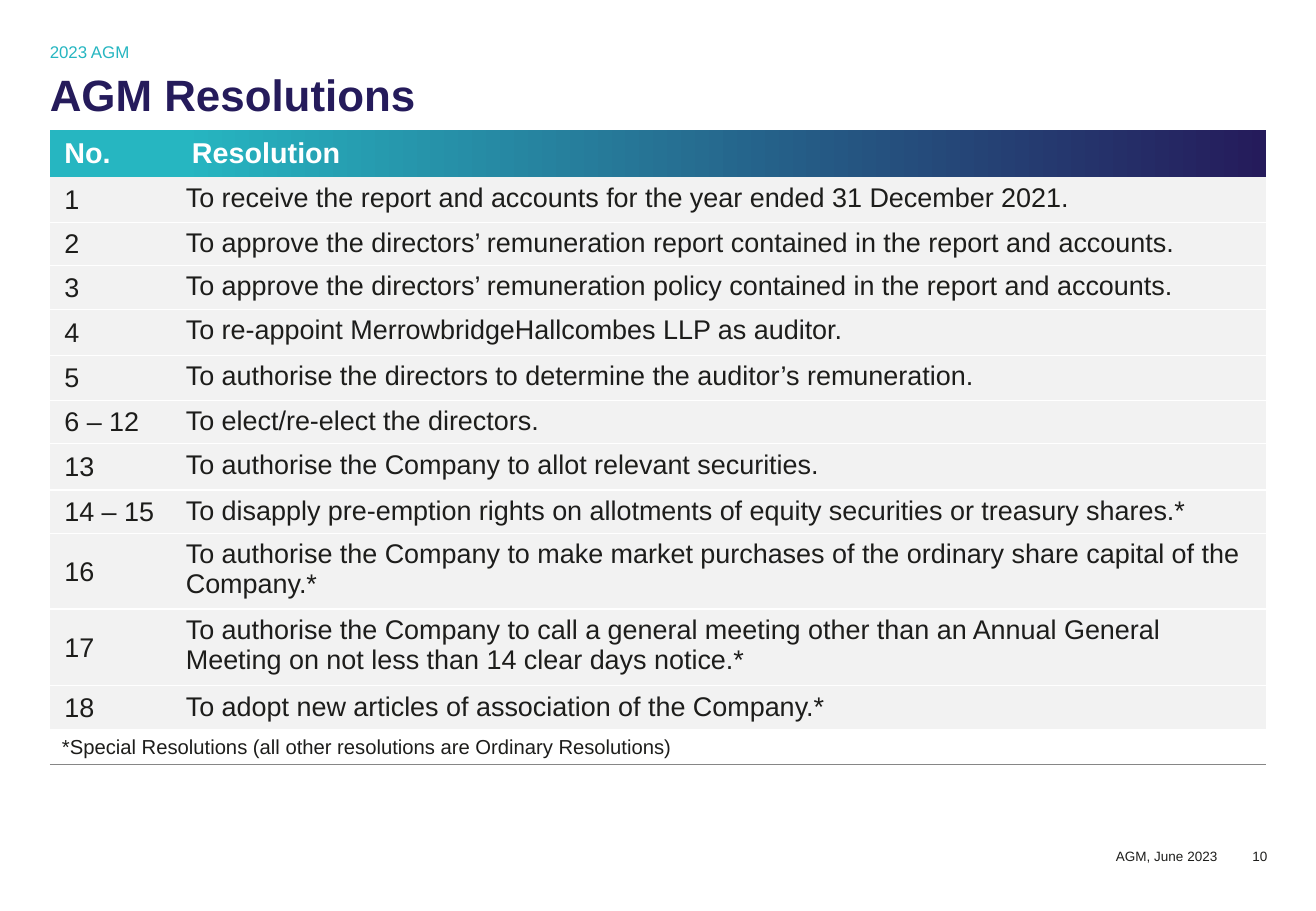
from lxml import etree
from pptx import Presentation
from pptx.dml.color import RGBColor
from pptx.enum.text import MSO_ANCHOR, PP_ALIGN
from pptx.oxml.ns import qn
from pptx.util import Inches, Pt

TOP, MIDDLE = MSO_ANCHOR.TOP, MSO_ANCHOR.MIDDLE
LEFT, RIGHT = PP_ALIGN.LEFT, PP_ALIGN.RIGHT

TEAL = RGBColor(0x26, 0xB6, 0xC1)
NAVY = RGBColor(0x25, 0x1B, 0x5B)
INK = RGBColor(0x1D, 0x1D, 0x1B)
WHITE = RGBColor(0xFF, 0xFF, 0xFF)
ROW_GREY = RGBColor(0xF2, 0xF2, 0xF2)
RULE_GREY = RGBColor(0x86, 0x86, 0x86)
FONT = "Arial"

HEADER = ("No.", "Resolution")
HEADER_HEIGHT = 0.39
# number, resolution, row height
RESOLUTIONS = [
    ("1", "To receive the report and accounts for the year ended 31 December 2021.", 0.37),
    ("2", "To approve the directors’ remuneration report contained in the report and accounts.", 0.35),
    ("3", "To approve the directors’ remuneration policy contained in the report and accounts.", 0.36),
    ("4", "To re-appoint MerrowbridgeHallcombes LLP as auditor.", 0.38),
    ("5", "To authorise the directors to determine the auditor’s remuneration.", 0.37),
    ("6 – 12", "To elect/re-elect the directors.", 0.35),
    ("13", "To authorise the Company to allot relevant securities.", 0.38),
    ("14 – 15", "To disapply pre-emption rights on allotments of equity securities "
                "or treasury shares.*", 0.36),
    ("16", "To authorise the Company to make market purchases of the ordinary share capital "
           "of the Company.*", 0.62),
    ("17", "To authorise the Company to call a general meeting other than an Annual General "
           "Meeting on not less than 14 clear days notice.*", 0.63),
    ("18", "To adopt new articles of association of the Company.*", 0.36),
]
FOOTNOTE = "*Special Resolutions (all other resolutions are Ordinary Resolutions)"
FOOTNOTE_HEIGHT = 0.29
COLUMN_WIDTHS = (1.07, 8.94)
TABLE_LEFT, TABLE_TOP = 0.41, 1.07

# text, box, size, colour, bold, alignment, anchor, line spacing
TEXTS = [
    ("2023 AGM", (0.41, 0.36, 10.02, 0.19), 10, TEAL, False, LEFT, TOP, 0.9),
    ("AGM Resolutions", (0.41, 0.61, 10.01, 0.46), 26, NAVY, True, LEFT, TOP, 0.9),
    ("AGM, June 2023", (4.43, 6.85, 5.59, 0.4), 8, INK, False, RIGHT, MIDDLE, 1.0),
    ("10", (10.02, 6.85, 0.41, 0.4), 8, INK, False, RIGHT, MIDDLE, 1.0),
]


def style_font(paragraph, size, color, bold=False):
    font = paragraph.font
    font.name, font.size, font.bold = FONT, Pt(size), bold
    font.color.rgb = color


def add_text(slide, text, box, size, color, bold, alignment, anchor, spacing):
    frame = slide.shapes.add_textbox(*map(Inches, box)).text_frame
    frame.word_wrap = True
    frame.vertical_anchor = anchor
    frame.margin_left = frame.margin_right = frame.margin_top = frame.margin_bottom = 0
    paragraph = frame.paragraphs[0]
    paragraph.text = text
    paragraph.alignment = alignment
    paragraph.line_spacing = spacing
    style_font(paragraph, size, color, bold)


def fill_cell(cell, text, size, color, margins, bold=False, anchor=MIDDLE):
    """Write the text; margins are left, top, right, bottom in inches."""
    cell.text = text
    cell.vertical_anchor = anchor
    (cell.margin_left, cell.margin_top,
     cell.margin_right, cell.margin_bottom) = map(Inches, margins)
    style_font(cell.text_frame.paragraphs[0], size, color, bold)


def set_borders(cell, top=None, bottom=None):
    """Draw the top and bottom edges given as (colour, points); hide the others."""
    properties = cell._tc.get_or_add_tcPr()
    edges = (("a:lnL", None), ("a:lnR", None), ("a:lnT", top), ("a:lnB", bottom))
    for index, (tag, edge) in enumerate(edges):
        line = etree.Element(qn(tag))
        if edge:
            color, width = edge
            line.set("w", str(Pt(width)))
            solid = etree.SubElement(line, qn("a:solidFill"))
            etree.SubElement(solid, qn("a:srgbClr")).set("val", str(color))
        else:
            etree.SubElement(line, qn("a:noFill"))
        properties.insert(index, line)


def set_solid(cell, color):
    cell.fill.solid()
    cell.fill.fore_color.rgb = color


def set_gradient(cell, *colors):
    cell.fill.gradient()
    cell.fill.gradient_angle = 0
    for stop, color in zip(cell.fill.gradient_stops, colors):
        stop.color.rgb = color


def add_resolution_table(slide):
    heights = [HEADER_HEIGHT, *(row[2] for row in RESOLUTIONS), FOOTNOTE_HEIGHT]
    table = slide.shapes.add_table(
        len(heights), len(COLUMN_WIDTHS), Inches(TABLE_LEFT), Inches(TABLE_TOP),
        Inches(sum(COLUMN_WIDTHS)), Inches(sum(heights))).table
    table.first_row = table.horz_banding = False
    for column, width in zip(table.columns, COLUMN_WIDTHS):
        column.width = Inches(width)
    for row, height in zip(table.rows, heights):
        row.height = Inches(height)

    for column, text in enumerate(HEADER):
        cell = table.cell(0, column)
        left = 0.12 if column == 0 else 0.1
        fill_cell(cell, text, 17, WHITE, (left, 0.05, 0.1, 0.05), bold=True)
        set_borders(cell)
    set_solid(table.cell(0, 0), TEAL)
    set_gradient(table.cell(0, 1), TEAL, NAVY)

    separator = (WHITE, 1)
    for index, (number, resolution, _) in enumerate(RESOLUTIONS, 1):
        number_cell, resolution_cell = table.cell(index, 0), table.cell(index, 1)
        fill_cell(number_cell, number, 16, INK, (0.12, 0.05, 0.05, 0.04))
        fill_cell(resolution_cell, resolution, 16, INK, (0.05, 0.05, 0.05, 0.04), anchor=TOP)
        for cell in (number_cell, resolution_cell):
            set_solid(cell, ROW_GREY)
            set_borders(cell, separator if index > 1 else None, separator)

    last = len(heights) - 1
    footnote, covered = table.cell(last, 0), table.cell(last, 1)
    footnote.merge(covered)
    fill_cell(footnote, FOOTNOTE, 12, INK, (0.1, 0.04, 0.1, 0.04))
    for cell in (footnote, covered):
        set_solid(cell, WHITE)
        set_borders(cell, separator, (RULE_GREY, 0.5))


def main():
    presentation = Presentation()
    presentation.slide_width = Inches(10.83)
    presentation.slide_height = Inches(7.5)
    slide = presentation.slides.add_slide(presentation.slide_layouts[6])
    for text in TEXTS:
        add_text(slide, *text)
    add_resolution_table(slide)
    presentation.save("out.pptx")


if __name__ == "__main__":
    main()
